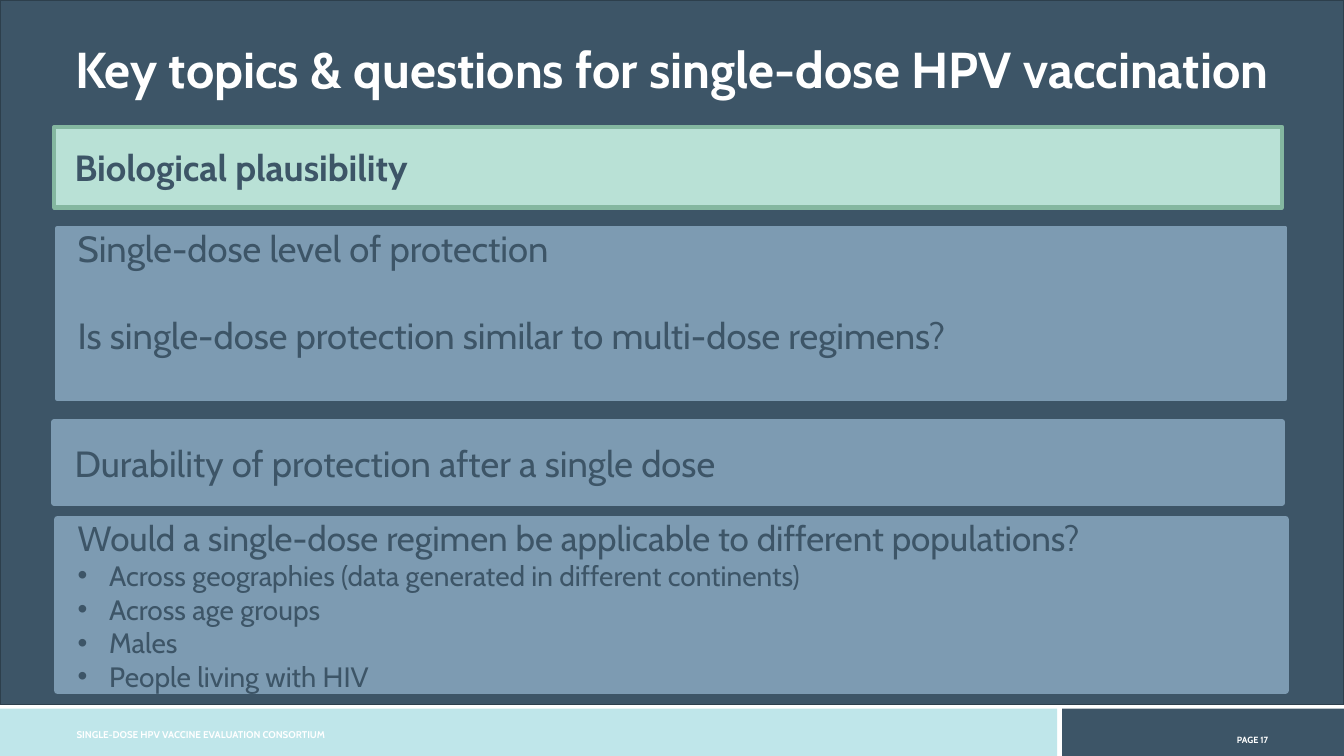
import dataclasses

import pptx
import pptx.dml.color
import pptx.enum.shapes
import pptx.enum.text
import pptx.oxml
import pptx.oxml.ns
import pptx.util

Cm = pptx.util.Cm
Pt = pptx.util.Pt
ALIGN = pptx.enum.text.PP_ALIGN
ANCHOR = pptx.enum.text.MSO_ANCHOR


@dataclasses.dataclass(frozen=True)
class Theme:
    font: str = "Cabin"
    navy: str = "3D5567"
    navy_edge: str = "2D3F4C"
    steel: str = "7D9BB2"
    mint: str = "B9E1D6"
    mint_edge: str = "84B7A0"
    aqua: str = "BFE6EA"
    white: str = "FFFFFF"
    title: float = 36
    topic: float = 26
    question: float = 25
    bullet: float = 20
    footer: float = 7
    page: float = 11


THEME = Theme()


@dataclasses.dataclass(frozen=True)
class Box:
    left: float
    top: float
    width: float
    height: float

    def lengths(self):
        return Cm(self.left), Cm(self.top), Cm(self.width), Cm(self.height)


def rgb(color):
    return pptx.dml.color.RGBColor.from_string(color)


def add_block(slide, box, fill, edge=None, edge_width=1):
    block = slide.shapes.add_shape(
        pptx.enum.shapes.MSO_SHAPE.RECTANGLE, *box.lengths())
    block.shadow.inherit = False
    block.fill.solid()
    block.fill.fore_color.rgb = rgb(fill)
    if edge:
        block.line.color.rgb = rgb(edge)
        block.line.width = Pt(edge_width)
    else:
        block.line.fill.background()
    return block


def add_run(paragraph, wording, size, color, bold=False):
    run = paragraph.add_run()
    run.text = wording
    run.font.name = THEME.font
    run.font.size = Pt(size)
    run.font.bold = bold
    run.font.color.rgb = rgb(color)
    return run


def add_label(slide, box, wording, size, align, anchor=ANCHOR.TOP):
    frame = slide.shapes.add_textbox(*box.lengths()).text_frame
    frame.word_wrap = True
    frame.vertical_anchor = anchor
    paragraph = frame.paragraphs[0]
    paragraph.alignment = align
    return paragraph, add_run(paragraph, wording, size, THEME.white, True)


def add_bullet(paragraph, indent=0.79):
    properties = paragraph._p.get_or_add_pPr()
    properties.set("marL", str(Cm(indent)))
    properties.set("indent", str(-Cm(indent)))
    namespace = pptx.oxml.ns.nsdecls("a")
    properties.append(pptx.oxml.parse_xml(
        f'<a:buFont {namespace} typeface="Arial"/>'))
    properties.append(pptx.oxml.parse_xml(
        f'<a:buChar {namespace} char="•"/>'))


def build_footer(slide, box):
    page_left = box.left + 26.77
    add_block(slide, Box(box.left, box.top, 26.64, box.height), THEME.aqua)
    add_label(slide, Box(box.left + 1.68, box.top + 0.38, 11.05, 0.56),
              "SINGLE-DOSE HPV VACCINE EVALUATION CONSORTIUM",
              THEME.footer, ALIGN.LEFT, ANCHOR.MIDDLE)
    add_block(slide, Box(page_left, box.top, box.width - 26.77, box.height),
              THEME.navy)
    _, page_number = add_label(
        slide, Box(page_left + 1.35, box.top + 0.48, 4.09, 0.56),
        "PAGE 17", THEME.page, ALIGN.RIGHT)
    page_number.font._element.set("baseline", "30000")


def build_header(slide, box):
    add_block(slide, box, THEME.navy, THEME.navy_edge)
    heading, _ = add_label(
        slide, Box(box.left + 0.23, box.top + 1.02, box.width - 0.46, 2.41),
        "Key topics & questions for single-dose HPV vaccination",
        THEME.title, ALIGN.CENTER)
    heading.line_spacing = 0.9


def build_topic(slide, box, lines, edge_width, size=THEME.topic, bullets=(),
                highlighted=False, gap=0, bottom=0.13):
    fill = THEME.mint if highlighted else THEME.steel
    edge = THEME.mint_edge if highlighted else THEME.steel
    frame = add_block(slide, box, fill, edge, edge_width).text_frame
    frame.word_wrap = True
    frame.vertical_anchor = ANCHOR.MIDDLE
    frame.margin_left, frame.margin_right = Cm(0.51), Cm(0.25)
    frame.margin_top, frame.margin_bottom = Cm(0.13), Cm(bottom)
    for position, wording in enumerate([*lines, *bullets]):
        paragraph = frame.add_paragraph() if position else frame.paragraphs[0]
        paragraph.alignment = ALIGN.LEFT
        is_bullet = position >= len(lines)
        if position and not is_bullet:
            paragraph.space_before = Pt(gap)
        if is_bullet:
            add_bullet(paragraph)
        add_run(paragraph, wording, THEME.bullet if is_bullet else size,
                THEME.navy, highlighted)


def build_topics(slide, box):
    short, tall, shift = 2.03, 4.32, 0.08
    build_topic(slide, Box(box.left + shift, box.top + 2.54, box.width, tall),
                ["Single-dose level of protection",
                 "Is single-dose protection similar to multi-dose regimens?"],
                3, gap=31.5, bottom=1.24)
    build_topic(slide, Box(box.left, box.top, box.width, short),
                ["Biological plausibility"], 3, highlighted=True)
    build_topic(slide, Box(box.left + shift, box.top + 9.88, box.width, tall),
                ["Would a single-dose regimen be applicable to "
                 "different populations?"],
                5, size=THEME.question, bullets=[
                    "Across geographies (data generated in different "
                    "continents)",
                    "Across age groups",
                    "Males",
                    "People living with HIV"])
    build_topic(slide, Box(box.left, box.top + 7.44, box.width, short),
                ["Durability of protection after a single dose"], 4.5)


def main():
    deck = pptx.Presentation()
    deck.slide_width, deck.slide_height = Cm(33.87), Cm(19.05)
    slide = deck.slides.add_slide(deck.slide_layouts[6])
    build_footer(slide, Box(0, 17.86, 33.87, 1.19))
    build_header(slide, Box(0, 0, 33.87, 17.75))
    build_topics(slide, Box(1.37, 3.2, 30.94, 14.2))
    deck.save("out.pptx")


if __name__ == "__main__":
    main()
